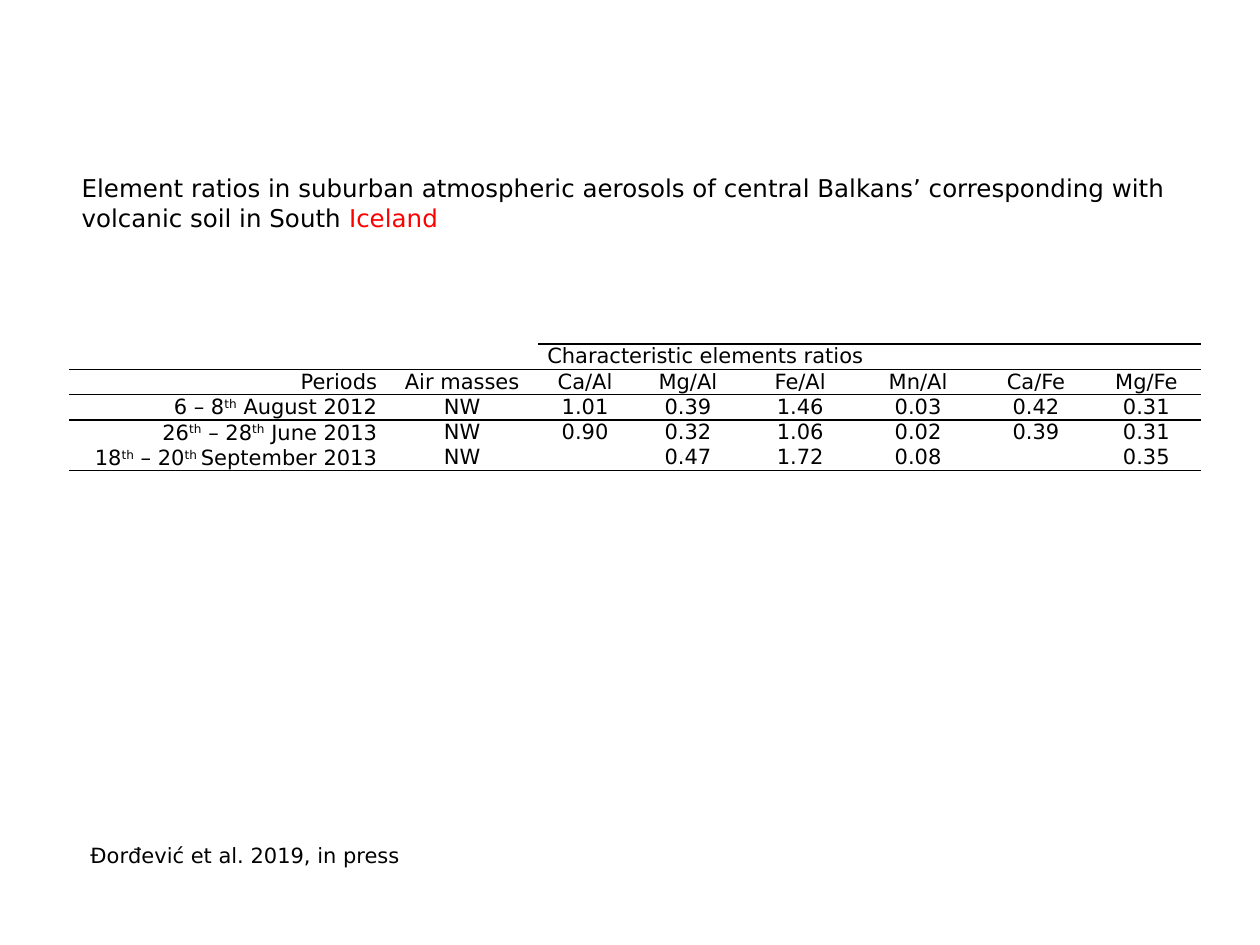
from lxml import etree
from pptx import Presentation
from pptx import util as u
from pptx.dml.color import RGBColor
from pptx.enum import text
from pptx.oxml.ns import qn

FONT = "DejaVu Sans"
INK = {"text": "000000", "accent": "FF0000", "rule": "000000"}
PLAIN = "{2D5ABB26-0587-4C30-8999-92F81FD0307C}"  # table style without grid
WIDE, HIGH = u.Inches(10), u.Inches(7.5)

COLS = [2.51, 1.21, 0.74, 0.89, 0.89, 0.98, 0.89, 0.86]  # relative widths
SPAN = 2  # first column below the spanning header
# "^" switches superscript on and off
ROWS = [
    ["", "", "Characteristic elements ratios", "", "", "", "", ""],
    ["Periods", "Air masses", "Ca/Al", "Mg/Al", "Fe/Al", "Mn/Al", "Ca/Fe", "Mg/Fe"],
    ["6 – 8^th^ August 2012", "NW", "1.01", "0.39", "1.46", "0.03", "0.42", "0.31"],
    ["26^th^ – 28^th^ June 2013", "NW", "0.90", "0.32", "1.06", "0.02", "0.39", "0.31"],
    ["18^th^ – 20^th ^September 2013", "NW", "", "0.47", "1.72", "0.08", "", "0.35"],
]


def place(x, y, w, h):
    """Turn shares of the slide into lengths."""
    return int(x * WIDE), int(y * HIGH), int(w * WIDE), int(h * HIGH)


def style(para, size):
    font = para.font
    font.name, font.size = FONT, u.Pt(size)
    font.color.rgb = RGBColor.from_string(INK["text"])


def add_text(slide, box, size, parts, wrap):
    """Add a one-paragraph text box; parts are (words, colour name)."""
    frame = slide.shapes.add_textbox(*place(*box)).text_frame
    frame.word_wrap = wrap
    para = frame.paragraphs[0]
    style(para, size)
    for words, ink in parts:
        run = para.add_run()
        run.text = words
        run.font.color.rgb = RGBColor.from_string(INK[ink])


def rule(cell, side):
    """Draw a 1 pt border on side T or B of a cell."""
    line = etree.SubElement(cell._tc.get_or_add_tcPr(), qn("a:ln" + side), w=str(u.Pt(1)))
    fill = etree.SubElement(line, qn("a:solidFill"))
    etree.SubElement(fill, qn("a:srgbClr"), val=INK["rule"])


def fill_cell(cell, words, align, anchor):
    cell.margin_left = cell.margin_right = u.Inches(0.07)
    cell.margin_top = cell.margin_bottom = 0
    cell.vertical_anchor = anchor
    para = cell.text_frame.paragraphs[0]
    para.alignment = align
    style(para, 12)
    for i, part in enumerate(words.split("^") if words else []):
        run = para.add_run()
        run.text = part
        if i % 2:
            run.font._element.set("baseline", "30000")
    if not words:
        etree.SubElement(para._p, qn("a:endParaRPr"), sz="1200")


def add_ratios(slide, box):
    x, y, w, h = place(*box)
    frame = slide.shapes.add_table(len(ROWS), len(COLS), x, y, w, h)
    table = frame.table
    table.first_row = table.horz_banding = False
    table._tbl.tblPr.find(qn("a:tableStyleId")).text = PLAIN
    for col, part in zip(table.columns, COLS):
        col.width = int(w * part / sum(COLS))
    last = len(ROWS) - 1
    for r, row in enumerate(ROWS):
        table.rows[r].height = h // len(ROWS)
        for c, words in enumerate(row):
            cell = table.cell(r, c)
            if r in (1, 2) or (r == 0 and c >= SPAN):
                rule(cell, "T")
            if r in (1, last) or (r == 0 and c >= SPAN):
                rule(cell, "B")
            cell.fill.background()
            align = text.PP_ALIGN.RIGHT if c == 0 else text.PP_ALIGN.CENTER
            if r == 0:
                align = text.PP_ALIGN.JUSTIFY
            anchor = text.MSO_ANCHOR.MIDDLE if r < 2 else text.MSO_ANCHOR.TOP
            if r >= 2 and c == 0:
                anchor = text.MSO_ANCHOR.BOTTOM
            fill_cell(cell, words, align, anchor)
    table.cell(0, SPAN).merge(table.cell(0, len(COLS) - 1))


def main():
    deck = Presentation()
    deck.slide_width, deck.slide_height = WIDE, HIGH
    slide = deck.slides.add_slide(deck.slide_layouts[6])
    add_text(slide, (0.062, 0.885, 0.277, 0.04), 12,
             [("Đorđević et al. 2019, in press", "text")], False)
    add_text(slide, (0.055, 0.177, 0.883, 0.076), 14,
             [("Element ratios in suburban atmospheric aerosols of central Balkans’ "
               "corresponding with volcanic soil in South ", "text"),
              ("Iceland", "accent")], True)
    add_ratios(slide, (0.055, 0.364, 0.898, 0.134))
    deck.save("out.pptx")


if __name__ == "__main__":
    main()
